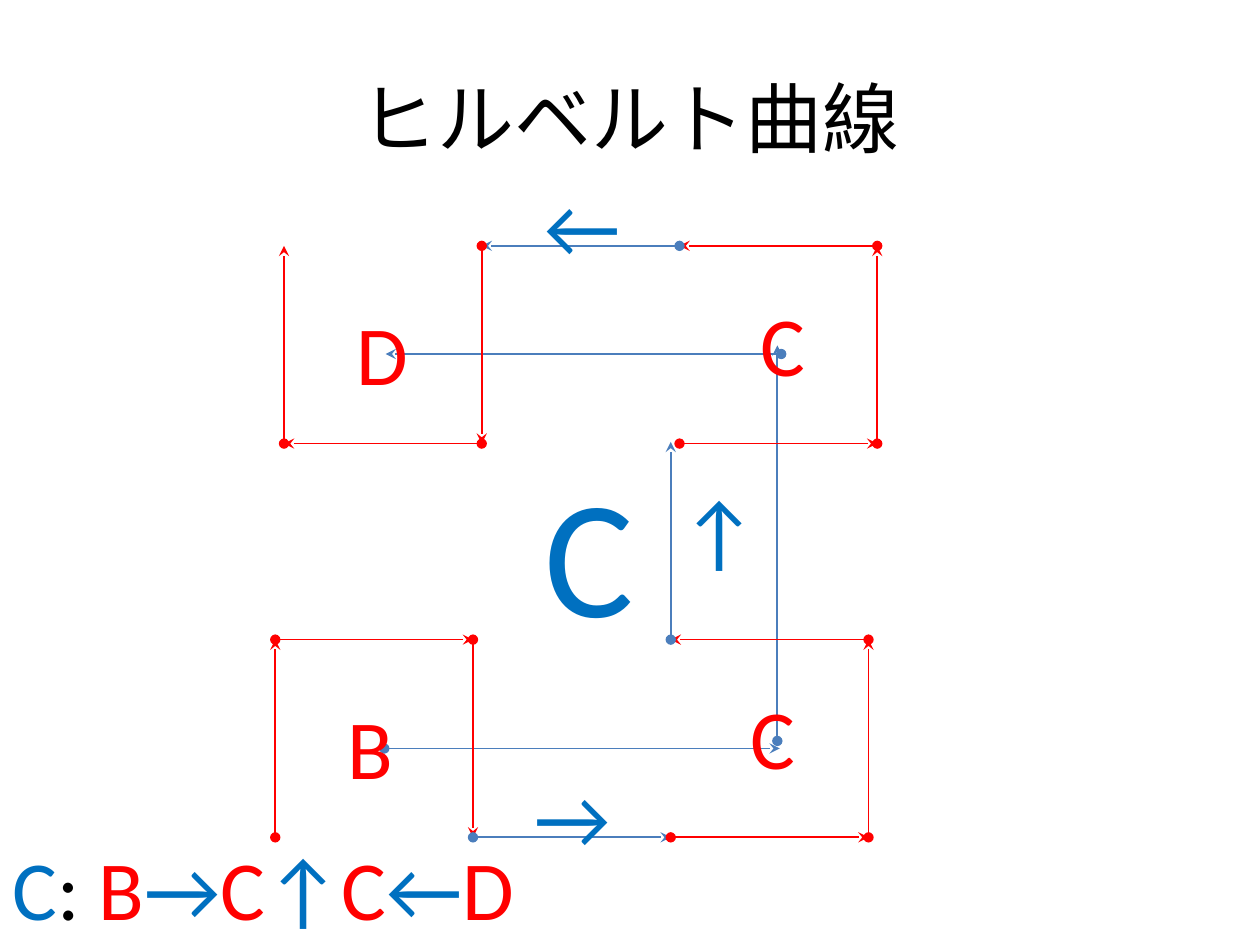
from dataclasses import dataclass

from lxml.etree import SubElement
from pptx import Presentation
from pptx.dml.color import RGBColor
from pptx.enum.shapes import MSO_CONNECTOR
from pptx.enum.text import MSO_ANCHOR, MSO_AUTO_SIZE, PP_ALIGN
from pptx.oxml.ns import qn
from pptx.util import Pt


@dataclass(frozen=True)
class Theme:
    """Colours, font and type sizes of the slide."""
    font: str = "Calibri"
    black: str = "000000"
    red: str = "FF0000"
    blue: str = "0070C0"
    steel: str = "4B7EBC"
    title: int = 44
    label: int = 48
    large: int = 96
    line: int = 1


THEME = Theme()
STEP = 113
MOVES = {"R": (1, 0), "L": (-1, 0), "U": (0, -1), "D": (0, 1)}


def write(para, text, size=THEME.label, color=THEME.red):
    """Add one formatted run to a paragraph."""
    run = para.add_run()
    run.text = text
    run.font.name = THEME.font
    run.font.size = Pt(size)
    run.font.color.rgb = RGBColor.from_string(color)


def head(slide, text):
    """Place and fill the title."""
    title = slide.shapes.title
    title.left, title.top, title.width, title.height = map(Pt, (36, 21.6, 648, 90))
    frame = title.text_frame
    frame.vertical_anchor = MSO_ANCHOR.MIDDLE
    para = frame.paragraphs[0]
    para.alignment = PP_ALIGN.CENTER
    write(para, text, size=THEME.title, color=THEME.black)


def label(slide, box, runs, size=THEME.label):
    """Add an unwrapped text box made of (text, color) runs."""
    frame = slide.shapes.add_textbox(*map(Pt, box)).text_frame
    frame.word_wrap = False
    frame.auto_size = MSO_AUTO_SIZE.SHAPE_TO_FIT_TEXT
    for text, color in runs:
        write(frame.paragraphs[0], text, size=size, color=color)


def stroke(slide, start, move, size, color):
    """Draw one arrow with a dot at its start and return its end."""
    (x, y), (dx, dy) = start, MOVES[move]
    end = x + dx * size, y + dy * size
    line = slide.shapes.add_connector(
        MSO_CONNECTOR.STRAIGHT, *map(Pt, (x, y, *end)))
    line.line.width = Pt(THEME.line)
    line.line.color.rgb = RGBColor.from_string(color)
    outline = line.line._get_or_add_ln()
    SubElement(outline, qn("a:headEnd"), type="oval")
    SubElement(outline, qn("a:tailEnd"), type="stealth")
    SubElement(line._element.spPr, qn("a:effectLst"))
    return end


def trail(slide, start, moves):
    """Chain strokes, with lower-case moves as blue links."""
    for move in moves:
        color = THEME.steel if move.islower() else THEME.red
        start = stroke(slide, start, move.upper(), STEP, color)


def main():
    """Build the slide."""
    deck = Presentation()
    deck.slide_width, deck.slide_height = Pt(720), Pt(540)
    slide = deck.slides.add_slide(deck.slide_layouts[5])
    head(slide, "ヒルベルト曲線")

    for start, move in (((219.6, 427.7), "R"), ((446.4, 202.3), "L"),
                        ((444.2, 423.4), "U")):
        stroke(slide, start, move, 2 * STEP, THEME.steel)
    trail(slide, (157.3, 478.5), "URDrRULu")
    trail(slide, (388.3, 253.5), "RULlDLU")

    label(slide, (303.8, 253.4, 66.2, 123.8), [("C", THEME.blue)], size=THEME.large)
    for text, x, y, width in (("B", 191.5, 393.8, 41), ("C", 421.9, 388.1, 40.3),
                              ("C", 427.7, 163.4, 40.3), ("D", 196.6, 168.5, 44.6)):
        label(slide, (x, y, width, 65.5), [(text, THEME.red)])
    for text, x, y in (("→", 298.1, 433.4), ("↑", 382.3, 270), ("←", 303.8, 95.8)):
        label(slide, (x, y, 58.3, 65.5), [(text, THEME.blue)])

    rule = [("C", THEME.blue), (": ", THEME.black)]
    rule += [(sign, THEME.red if sign.isalpha() else THEME.blue)
             for sign in "B→C↑C←D"]
    label(slide, (0, 474.5, 303.8, 65.5), rule)
    deck.save("out.pptx")


if __name__ == "__main__":
    main()
